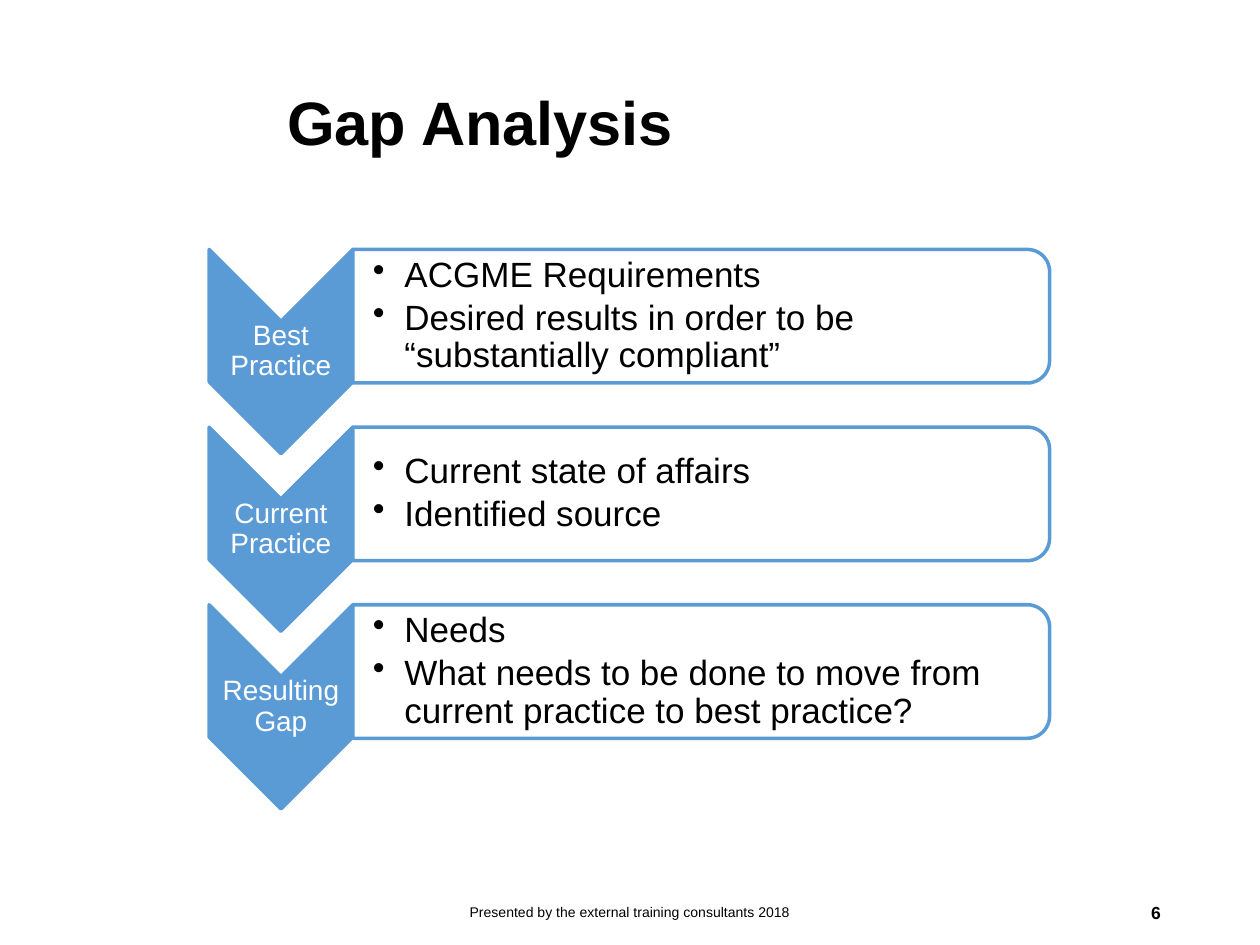
from collections import namedtuple
from dataclasses import dataclass

from lxml.etree import SubElement
from pptx import Presentation
from pptx.dml.color import RGBColor
from pptx.enum.shapes import MSO_SHAPE as Preset
from pptx.enum.text import MSO_ANCHOR as Anchor, PP_ALIGN as Align
from pptx.oxml.ns import qn
from pptx.util import Inches, Pt

Box = namedtuple("Box", "left top width height")


@dataclass(frozen=True)
class Theme:
    """Colours, font and type sizes of the slide."""
    font: str = "Arial"
    ink: RGBColor = RGBColor(0, 0, 0)
    paper: RGBColor = RGBColor(255, 255, 255)
    accent: RGBColor = RGBColor(0x5B, 0x9B, 0xD5)
    title: int = 35
    detail: int = 20
    stage: int = 16
    number: int = 10
    footer: int = 8
    outline: int = 2
    bar_alpha: int = 90


THEME = Theme()
STAGES = [
    ("Best Practice", ["ACGME Requirements",
                       "Desired results in order to be “substantially compliant”"]),
    ("Current Practice", ["Current state of affairs", "Identified source"]),
    ("Resulting Gap", ["Needs",
                       "What needs to be done to move from current practice to best practice?"]),
]


def place(shape, box):
    """Move a shape to a box given in inches."""
    shape.left, shape.top, shape.width, shape.height = map(Inches, box)


def set_text(shape, lines, size, color=THEME.ink, align=Align.LEFT, bold=False,
             margins=(0.1, 0.05, 0.1, 0.05), spacing=1, after=0, bullets=False):
    """Write formatted paragraphs, centred vertically, into a shape."""
    frame = shape.text_frame
    frame.word_wrap = True
    frame.vertical_anchor = Anchor.MIDDLE
    (frame.margin_left, frame.margin_top,
     frame.margin_right, frame.margin_bottom) = map(Inches, margins)
    frame.text = "\n".join(lines)
    for paragraph in frame.paragraphs:
        paragraph.alignment = align
        paragraph.line_spacing = spacing
        paragraph.space_after = Pt(after)
        if bullets:
            add_bullet(paragraph)
        for run in paragraph.runs:
            font = run.font
            font.name, font.size, font.bold = THEME.font, Pt(size), bold
            font.color.rgb = color


def add_bullet(paragraph):
    """Give a paragraph a round bullet with a hanging indent."""
    properties = paragraph._p.get_or_add_pPr()
    properties.set("marL", str(Inches(0.25)))
    properties.set("indent", str(Inches(-0.25)))
    SubElement(properties, qn("a:buChar"), char="•")


def add_turned_shape(shapes, preset, box, fill):
    """Add an outlined preset turned a quarter so that it covers the box."""
    left = box.left + (box.width - box.height) / 2
    top = box.top + (box.height - box.width) / 2
    shape = shapes.add_shape(preset, *map(Inches, (left, top, box.height, box.width)))
    shape.rotation = 90
    shape.shadow.inherit = False
    shape.fill.solid()
    shape.fill.fore_color.rgb = fill
    shape.line.color.rgb = THEME.accent
    shape.line.width = Pt(THEME.outline)
    return shape


def add_text_box(shapes, box, lines, size, **style):
    """Add a text box with formatted paragraphs."""
    set_text(shapes.add_textbox(*map(Inches, box)), lines, size, **style)


def add_title(slide, box, text):
    """Fill the title placeholder."""
    place(slide.shapes.title, box)
    set_text(slide.shapes.title, [text], THEME.title, bold=True,
             margins=(0.1,) * 4, spacing=0.9)


def add_stage(shapes, box, name, details):
    """Add one chevron with its name and the bar of details beside it."""
    chevron = Box(box.left, box.top, 1.14, box.height)
    bar = Box(box.left + chevron.width, box.top, box.width - chevron.width, 1.06)
    notch = chevron.width / 2
    label = Box(box.left, box.top + notch, chevron.width, box.height - 2 * notch)
    add_turned_shape(shapes, Preset.CHEVRON, chevron, THEME.accent)
    add_text_box(shapes, label, [name], THEME.stage, color=THEME.paper,
                 align=Align.CENTER, margins=(0.01,) * 4, spacing=0.9, after=5.6)
    panel = add_turned_shape(shapes, Preset.ROUND_2_SAME_RECTANGLE, bar, THEME.paper)
    color = panel._element.spPr.find(qn("a:solidFill"))[0]
    SubElement(color, qn("a:alpha"), val=str(THEME.bar_alpha * 1000))
    text_box = Box(bar.left, bar.top + 0.05, bar.width - 0.05, bar.height - 0.1)
    add_text_box(shapes, text_box, details, THEME.detail,
                 margins=(0.16, 0.01, 0.01, 0.01), spacing=0.9, after=3, bullets=True)


def add_stages(slide, box, stages):
    """Stack the stages at an equal pitch, each chevron nesting in the next."""
    shapes = slide.shapes.add_group_shape().shapes
    height = 1.62
    pitch = (box.height - height) / (len(stages) - 1)
    for row, (name, details) in enumerate(stages):
        stage_box = Box(box.left, box.top + row * pitch, box.width, height)
        add_stage(shapes, stage_box, name, details)


def add_footer(slide, box, credit, number):
    """Add the centred credit and the page number at the right."""
    credit_width, number_width = 3.38, 2.25
    middle = box.left + (box.width - credit_width) / 2
    right = box.left + box.width - number_width
    add_text_box(slide.shapes, Box(middle, box.top, credit_width, box.height),
                 [credit], THEME.footer, align=Align.CENTER)
    add_text_box(slide.shapes, Box(right, box.top, number_width, box.height),
                 [number], THEME.number, align=Align.RIGHT, bold=True)


def main():
    """Build and save the slide."""
    presentation = Presentation()
    presentation.slide_width, presentation.slide_height = Inches(10), Inches(7.5)
    slide = presentation.slides.add_slide(presentation.slide_layouts[5])
    add_title(slide, Box(2.18, 0.27, 7.14, 1.45), "Gap Analysis")
    add_stages(slide, Box(1.66, 1.98, 6.67, 4.44), STAGES)
    add_footer(slide, Box(0.69, 7.04, 8.62, 0.4),
               "Presented by the external training consultants 2018", "6")
    presentation.save("out.pptx")


if __name__ == "__main__":
    main()
